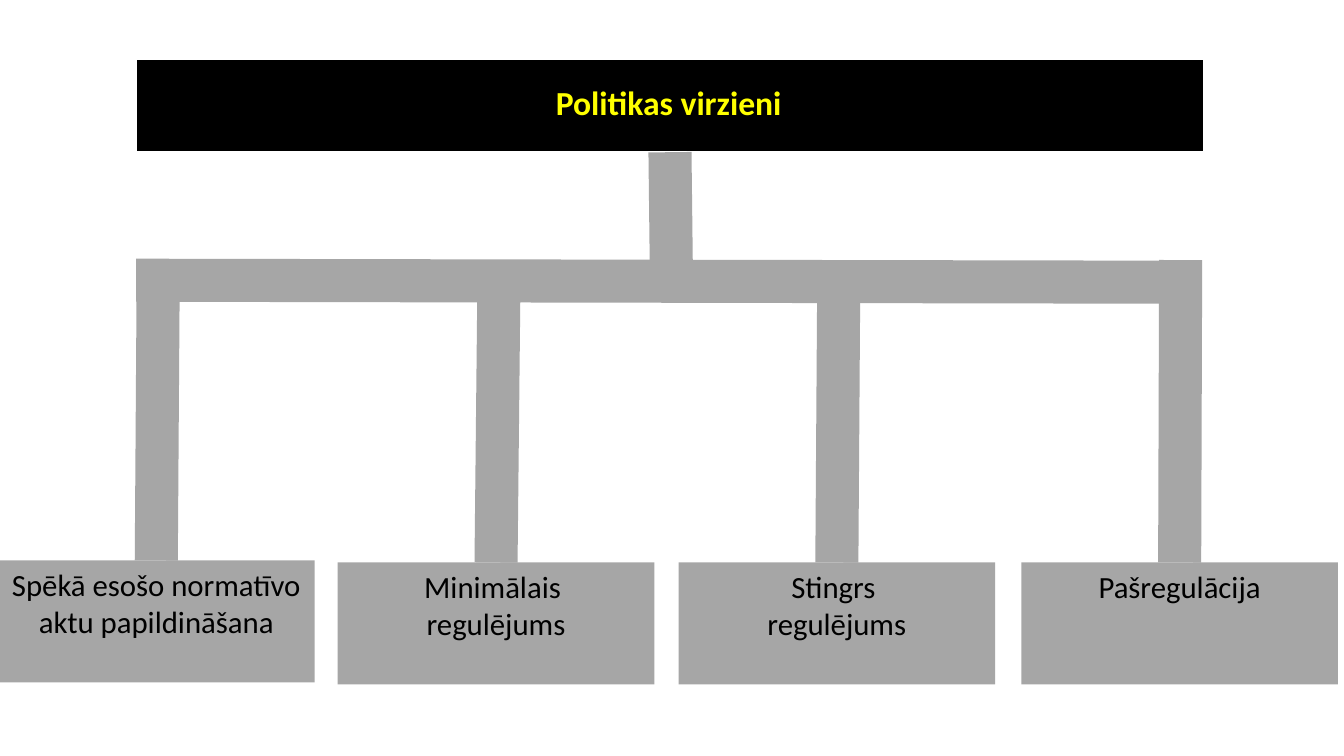
from dataclasses import dataclass

from lxml.etree import SubElement
from pptx import Presentation
from pptx.dml.color import RGBColor
from pptx.enum.shapes import MSO_CONNECTOR as Line, MSO_SHAPE as Preset
from pptx.enum.text import MSO_ANCHOR as Anchor, MSO_AUTO_SIZE as Fit, PP_ALIGN as Align
from pptx.oxml.ns import qn
from pptx.shapes.autoshape import Shape
from pptx.shapes.connector import Connector
from pptx.slide import Slide
from pptx.util import Inches, Pt

COLORS = {
    "header": "000000",
    "outline": "FFFFFF",
    "title": "FFFF00",
    "tree": "A6A6A6",
    "option": "000000",
}
TITLE_FONT = {"name": "Calibri", "size": Pt(24), "bold": True}
OPTION_FONT = {"name": "Calibri", "size": Pt(22), "bold": False}
TITLE_FRAME = {"word_wrap": True, "vertical_anchor": Anchor.MIDDLE}
OPTION_FRAME = {
    "word_wrap": True,
    "vertical_anchor": Anchor.TOP,
    "auto_size": Fit.SHAPE_TO_FIT_TEXT,
}
TITLE_PARAGRAPH = {"alignment": Align.CENTER, "line_spacing": 0.9}
OPTION_PARAGRAPH = {"alignment": Align.CENTER}
OPTION_WIDTH, OPTION_HEIGHT = 3.14, 1.21
TOP, BOTTOM = 0, 2


@dataclass
class Option:
    lines: list[str]
    left: float
    top: float
    branch_x: float
    branch_top: float


OPTIONS = [
    Option(["Spēkā esošo normatīvo aktu papildināšana"], -0.02, 5.56, 1.57, 2.65),
    Option(["Minimālais ", "regulējums"], 3.35, 5.58, 4.95, 2.65),
    Option(["Stingrs ", "regulējums"], 6.73, 5.58, 8.32, 2.65),
    Option(["Pašregulācija"], 10.13, 5.58, 11.71, 2.58),
]


def color(part: str) -> RGBColor:
    return RGBColor.from_string(COLORS[part])


def apply(target: object, values: dict) -> None:
    for key, value in values.items():
        setattr(target, key, value)


def write(box: Shape, lines: list[str], frame: dict, paragraph_format: dict,
          font: dict, part: str) -> None:
    apply(box.text_frame, frame)
    box.text_frame.text = "\n".join(lines)
    for paragraph in box.text_frame.paragraphs:
        apply(paragraph, paragraph_format)
        for run in paragraph.runs:
            apply(run.font, font)
            run.font.color.rgb = color(part)


def add_block(slide: Slide, left: float, top: float, width: float,
              height: float, part: str) -> Shape:
    block = slide.shapes.add_shape(
        Preset.RECTANGLE, Inches(left), Inches(top), Inches(width), Inches(height))
    block.shadow.inherit = False
    block.fill.solid()
    block.fill.fore_color.rgb = color(part)
    block.line.fill.background()
    return block


def add_bar(slide: Slide, x1: float, y1: float, x2: float, y2: float) -> Connector:
    bar = slide.shapes.add_connector(
        Line.STRAIGHT, Inches(x1), Inches(y1), Inches(x2), Inches(y2))
    bar.line.color.rgb = color("tree")
    bar.line.width = Pt(30.75)
    SubElement(bar._element.spPr, qn("a:effectLst"))
    return bar


def add_option(slide: Slide, option: Option) -> None:
    block = add_block(slide, option.left, option.top, OPTION_WIDTH, OPTION_HEIGHT, "tree")
    write(block, option.lines, OPTION_FRAME, OPTION_PARAGRAPH, OPTION_FONT, "option")
    branch = add_bar(slide, option.branch_x, option.branch_top, option.branch_x, option.top)
    branch.end_connect(block, TOP)


def add_header(slide: Slide) -> Shape:
    header = add_block(slide, 1.35, 0.59, 10.59, 0.92, "header")
    header.line.color.rgb = color("outline")
    header.line.width = Pt(1)
    title = slide.shapes.add_textbox(Inches(0.92), Inches(0.31), Inches(11.5), Inches(1.45))
    write(title, ["Politikas virzieni "], TITLE_FRAME, TITLE_PARAGRAPH, TITLE_FONT, "title")
    return header


def main() -> None:
    deck = Presentation()
    deck.slide_width, deck.slide_height = Inches(13.33), Inches(7.5)
    slide = deck.slides.add_slide(deck.slide_layouts[6])
    header = add_header(slide)
    for option in OPTIONS:
        add_option(slide, option)
    add_bar(slide, 1.35, 2.78, 11.84, 2.8)
    trunk = add_bar(slide, 6.66, 1.51, 6.66, 2.8)
    trunk.begin_connect(header, BOTTOM)
    deck.save("out.pptx")


if __name__ == "__main__":
    main()
